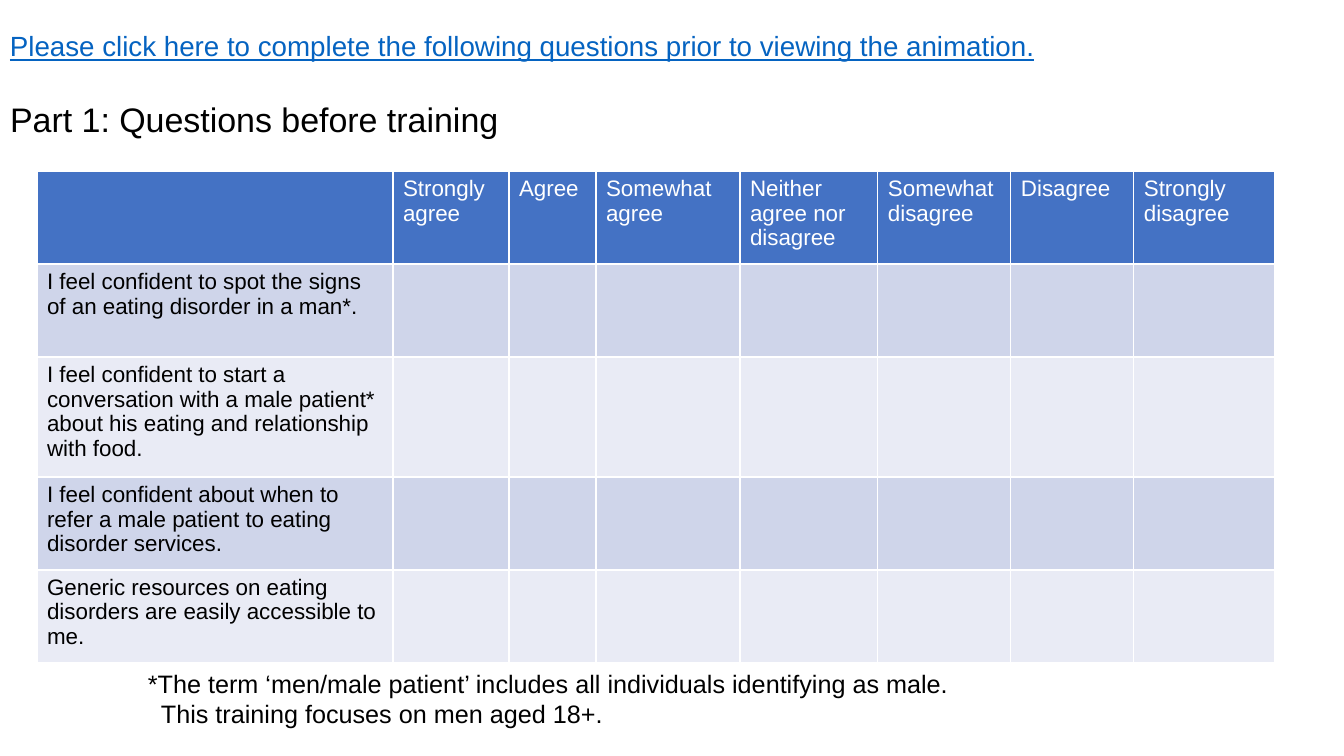
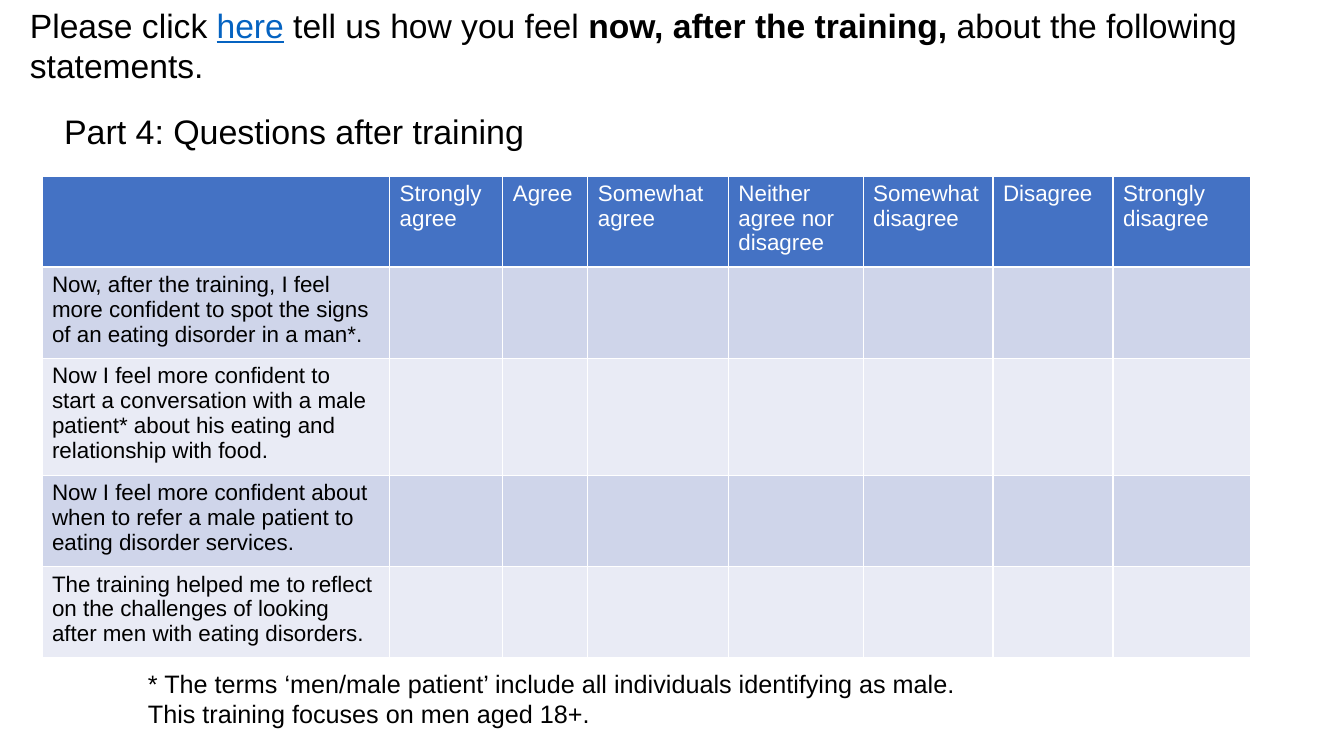
import pptx
import pptx.util
import pptx.dml.color
import pptx.enum.text

PX = 9144000 / 1008  # EMU per px, at 100.8 px to the inch
FONT = "Arial"
COLORS = {"text": "000000", "link": "0563C1", "header": "4472C4",
          "header_text": "FFFFFF", "odd": "CFD5EA", "even": "E9EBF5"}

SCALE = ["Strongly agree", "Agree", "Somewhat agree", "Neither agree nor disagree",
         "Somewhat disagree", "Disagree", "Strongly disagree"]
COLUMN_SHARES = [356, 116, 87, 144, 138, 133, 123, 141]
ROW_SHARES = [93, 93, 120, 93, 93]
FOOTNOTE_BOX = (138, 663, 1144, 72)

# Boxes are left, top, width, height in px; prompt runs are (text, style).
SLIDES = [
    {
        "title": "Part 1: Questions before training",
        "title_box": (0, 98, 1213, 48),
        "prompt": [("Please click here to complete the following questions "
                    "prior to viewing the animation.", "link")],
        "prompt_box": (0, 24, 1213, 42),
        "prompt_size": 19.8,
        "table_box": (37, 171, 1238, 492),
        "statements": [
            "I feel confident to spot the signs of an eating disorder in a man*.",
            "I feel confident to start a conversation with a male patient* about "
            "his eating and relationship with food.",
            "I feel confident about when to refer a male patient to eating "
            "disorder services.",
            "Generic resources on eating disorders are easily accessible to me.",
        ],
        "footnote": ["*The term ‘men/male patient’ includes all individuals "
                     "identifying as male.",
                     "This training focuses on men aged 18+."],
        "footnote_indent": 13,
    },
    {
        "title": "Part 4: Questions after training",
        "title_box": (54, 109, 1159, 48),
        "prompt": [("Please click ", "plain"), ("here", "link"),
                   (" tell us how you feel ", "plain"),
                   ("now, after the training, ", "bold"),
                   ("about the following statements.", "plain")],
        "prompt_box": (20, 0, 1324, 92),
        "prompt_size": 24,
        "table_box": (42, 176, 1209, 482),
        "statements": [
            "Now, after the training, I feel more confident to spot the signs "
            "of an eating disorder in a man*.",
            "Now I feel more confident to start a conversation with a male "
            "patient* about his eating and relationship with food.",
            "Now I feel more confident about when to refer a male patient to "
            "eating disorder services.",
            "The training helped me to reflect on the challenges of looking "
            "after men with eating disorders.",
        ],
        "footnote": ["* The terms ‘men/male patient’ include all individuals "
                     "identifying as male.",
                     "This training focuses on men aged 18+."],
        "footnote_indent": 0,
    },
]


def px(n):
    return pptx.util.Emu(round(n * PX))


def rgb(name):
    return pptx.dml.color.RGBColor.from_string(COLORS[name])


def format_run(r, size, color="text", bold=False, underline=False):
    r.font.name = FONT
    r.font.size = pptx.util.Pt(size)
    r.font.color.rgb = rgb(color)
    r.font.bold = bold
    r.font.underline = underline


def add_text_box(s, box):
    tf = s.shapes.add_textbox(*map(px, box)).text_frame
    tf.word_wrap = True
    return tf


def add_title(s, text, box):
    sp = s.shapes.title
    sp.left, sp.top, sp.width, sp.height = map(px, box)
    tf = sp.text_frame
    tf.text = text
    tf.auto_size = pptx.enum.text.MSO_AUTO_SIZE.NONE
    tf.vertical_anchor = pptx.enum.text.MSO_ANCHOR.MIDDLE
    p = tf.paragraphs[0]
    p.alignment = pptx.enum.text.PP_ALIGN.LEFT
    p.line_spacing = 0.9
    format_run(p.runs[0], 24.3)


def add_prompt(s, runs, box, size):
    p = add_text_box(s, box).paragraphs[0]
    for text, style in runs:
        r = p.add_run()
        r.text = text
        link = style == "link"
        format_run(r, size, "link" if link else "text", style == "bold", link)


def add_footnote(s, lines, indent):
    tf = add_text_box(s, FOOTNOTE_BOX)
    tf.text = "\n".join(lines)
    for p in tf.paragraphs:
        format_run(p.runs[0], 18)
    if indent:
        tf.paragraphs[1]._p.get_or_add_pPr().set("marL", str(px(indent)))


def add_rating_table(s, statements, box):
    """Add the header and statements; the default table style draws white rules."""
    rows = [["", *SCALE]] + [[text] + [""] * len(SCALE) for text in statements]
    table = s.shapes.add_table(len(rows), len(rows[0]), *map(px, box)).table
    for column, share in zip(table.columns, COLUMN_SHARES):
        column.width = px(box[2] * share / sum(COLUMN_SHARES))
    for row, share in zip(table.rows, ROW_SHARES):
        row.height = px(box[3] * share / sum(ROW_SHARES))
    for i, texts in enumerate(rows):
        fill = "header" if i == 0 else "odd" if i % 2 else "even"
        for j, text in enumerate(texts):
            cell = table.cell(i, j)
            cell.fill.solid()
            cell.fill.fore_color.rgb = rgb(fill)
            if text:
                cell.text_frame.text = text
                format_run(cell.text_frame.paragraphs[0].runs[0], 16,
                           "text" if i else "header_text")


def main():
    prs = pptx.Presentation()
    prs.slide_width, prs.slide_height = px(1344), px(756)
    for content in SLIDES:
        s = prs.slides.add_slide(prs.slide_layouts[5])
        add_title(s, content["title"], content["title_box"])
        add_prompt(s, content["prompt"], content["prompt_box"], content["prompt_size"])
        add_rating_table(s, content["statements"], content["table_box"])
        add_footnote(s, content["footnote"], content["footnote_indent"])
    prs.save("out.pptx")


if __name__ == "__main__":
    main()
